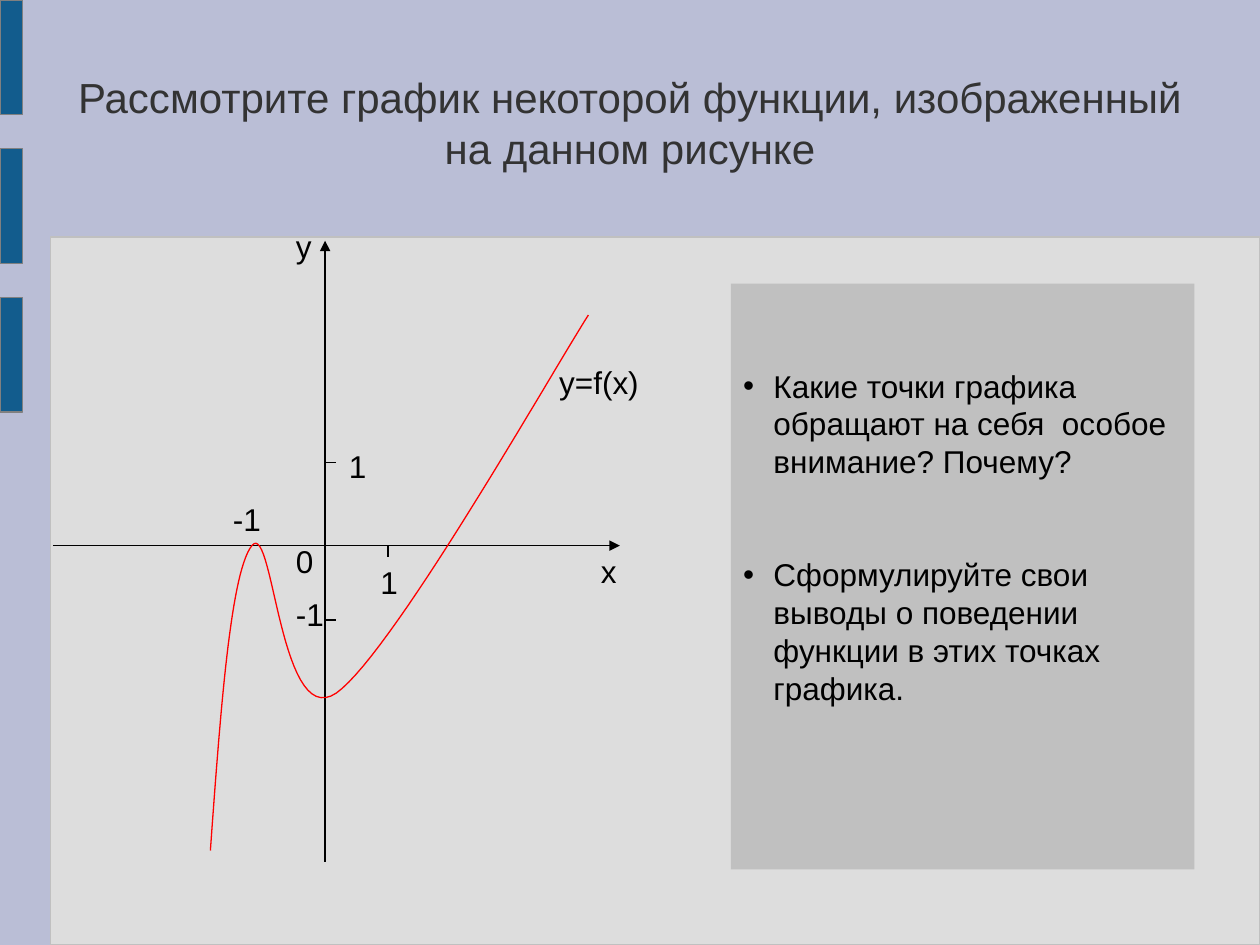
from lxml.etree import SubElement
from pptx import Presentation
from pptx.dml.color import RGBColor
from pptx.enum.shapes import MSO_CONNECTOR, MSO_SHAPE
from pptx.enum.text import MSO_ANCHOR, PP_ALIGN
from pptx.oxml.ns import qn
from pptx.util import Inches, Pt

BLACK = "000000"
GREY = "C0C0C0"
ORIGIN_X, ORIGIN_Y = 2.58, 4.33


def color(value):
    return RGBColor.from_string(value)


def add_block(slide, left, top, width, height, fill, outline=None, preset=MSO_SHAPE.RECTANGLE):
    block = slide.shapes.add_shape(
        preset, Inches(left), Inches(top), Inches(width), Inches(height))
    block.shadow.inherit = False
    block.fill.solid()
    block.fill.fore_color.rgb = color(fill)
    if outline:
        block.line.color.rgb = color(outline)
        block.line.width = Pt(0.75)
    else:
        block.line.fill.background()
    if preset == MSO_SHAPE.ROUNDED_RECTANGLE:
        block.adjustments[0] = 0
    return block


def add_line(slide, x1, y1, x2, y2, arrow=False):
    line = slide.shapes.add_connector(
        MSO_CONNECTOR.STRAIGHT, Inches(x1), Inches(y1), Inches(x2), Inches(y2))
    line.line.color.rgb = color(BLACK)
    line.line.width = Pt(0.75)
    if arrow:
        SubElement(line.line._get_or_add_ln(), qn("a:tailEnd"), type="triangle")
    SubElement(line._element.spPr, qn("a:effectLst"))


def bezier_points(start, controls, steps=30):
    points = (start, *controls)
    for step in range(1, steps + 1):
        t = step / steps
        weights = ((1 - t) ** 3, 3 * t * (1 - t) ** 2, 3 * t ** 2 * (1 - t), t ** 3)
        yield tuple(sum(w * p[axis] for w, p in zip(weights, points)) for axis in (0, 1))


def add_curve(slide, start, segments, stroke):
    points = []
    pen = start
    for controls in segments:
        points.extend(bezier_points(pen, controls))
        pen = controls[-1]
    builder = slide.shapes.build_freeform(Inches(start[0]), Inches(start[1]))
    builder.add_line_segments([(Inches(x), Inches(y)) for x, y in points], close=False)
    curve = builder.convert_to_shape()
    curve.shadow.inherit = False
    curve.fill.background()
    curve.line.color.rgb = color(stroke)
    curve.line.width = Pt(0.75)


def format_runs(paragraph, size, text_color):
    for run in paragraph.runs:
        run.font.name = "Arial"
        run.font.size = Pt(size)
        run.font.color.rgb = color(text_color)


def add_label(slide, text, left, top, width):
    label = slide.shapes.add_textbox(Inches(left), Inches(top), Inches(width), Inches(0.4))
    label.text_frame.word_wrap = False
    label.text_frame.text = text
    format_runs(label.text_frame.paragraphs[0], 18, BLACK)


def add_title(slide, text):
    title = slide.shapes.add_textbox(Inches(0.5), Inches(0.35), Inches(9), Inches(1.24))
    frame = title.text_frame
    frame.word_wrap = True
    frame.vertical_anchor = MSO_ANCHOR.MIDDLE
    frame.text = text
    frame.paragraphs[0].alignment = PP_ALIGN.CENTER
    format_runs(frame.paragraphs[0], 24, "333333")


def add_questions(slide, questions):
    frame = add_block(slide, 5.8, 2.25, 3.68, 4.65, GREY).text_frame
    frame.word_wrap = True
    frame.vertical_anchor = MSO_ANCHOR.TOP
    frame.margin_top = Inches(0.66)
    frame.text = "\n".join(questions)
    for index, paragraph in enumerate(frame.paragraphs):
        paragraph.alignment = PP_ALIGN.LEFT
        paragraph.space_before = Pt(43 if index else 0)
        format_runs(paragraph, 18, BLACK)
        properties = paragraph._p.get_or_add_pPr()
        properties.set("marL", str(Inches(0.24)))
        properties.set("indent", str(-Inches(0.24)))
        SubElement(properties, qn("a:buFont"), typeface="Arial")
        SubElement(properties, qn("a:buChar"), char="•")


def add_graph(slide):
    add_line(slide, 0.42, ORIGIN_Y, 4.92, ORIGIN_Y, arrow=True)
    add_line(slide, ORIGIN_X, 6.84, ORIGIN_X, 1.91, arrow=True)
    add_curve(slide, (1.67, 6.75), [
        ((1.75, 5.65), (1.83, 4.54), (2, 4.33)),
        ((2.17, 4.12), (2.22, 5.81), (2.67, 5.5)),
        ((3.11, 5.19), (4.36, 2.99), (4.67, 2.5)),
    ], "FF0000")
    for tick_y in (3.67, 4.92):
        add_line(slide, ORIGIN_X, tick_y, ORIGIN_X + 0.09, tick_y)
    add_line(slide, 3.08, ORIGIN_Y, 3.08, ORIGIN_Y + 0.09)
    for text, left, top, width in [
        ("1", 2.67, 3.5, 0.34),
        ("1", 2.92, 4.42, 0.34),
        ("-1", 2.25, 4.67, 0.42),
        ("0", 2.25, 4.25, 0.34),
        ("х", 4.67, 4.33, 0.32),
        ("у", 2.25, 1.75, 0.32),
        ("-1", 1.75, 3.92, 0.42),
        ("y=f(x)", 4.34, 2.83, 0.83),
    ]:
        add_label(slide, text, left, top, width)


def main():
    presentation = Presentation()
    presentation.slide_width = Inches(10)
    presentation.slide_height = Inches(7.5)
    slide = presentation.slides.add_slide(presentation.slide_layouts[6])
    slide.background.fill.solid()
    slide.background.fill.fore_color.rgb = color("BABED6")

    add_block(slide, 0.4, 1.88, 9.6, 5.62, "DDDDDD", GREY, MSO_SHAPE.ROUNDED_RECTANGLE)
    for index in range(3):
        add_block(slide, 0, index * 1.18, 0.18, 0.91, "125C8D", "808080",
                  MSO_SHAPE.ROUNDED_RECTANGLE)
    add_graph(slide)
    add_title(slide, "Рассмотрите график некоторой функции, изображенный на данном рисунке")
    add_questions(slide, [
        "Какие точки графика обращают на себя  особое внимание? Почему?",
        "Сформулируйте свои выводы о поведении функции в этих точках графика.",
    ])
    presentation.save("out.pptx")


if __name__ == "__main__":
    main()
